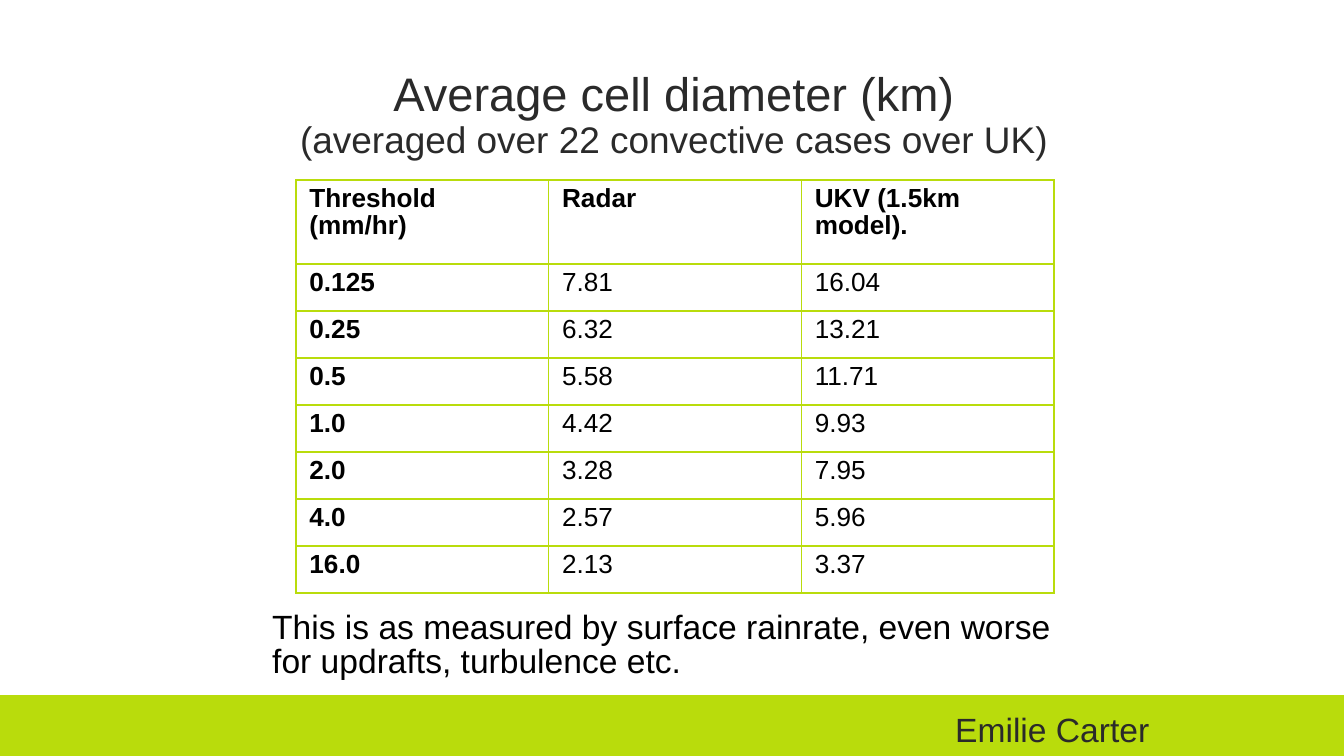
from lxml.etree import SubElement as Sub
from pptx import Presentation
from pptx.dml.color import RGBColor
from pptx.enum.shapes import MSO_SHAPE as Shape
from pptx.enum.text import MSO_ANCHOR as Anchor, MSO_AUTO_SIZE as Fit, PP_ALIGN as Align
from pptx.oxml.ns import qn
from pptx.util import Emu, Pt

SCALE = 914400 / 134.4
LIME, INK, BLACK, WHITE = "B9DC0C", "2A2A2A", "000000", "FFFFFF"
ROWS = [
    ("Threshold (mm/hr)", "Radar", "UKV (1.5km model)."),
    ("0.125", "7.81", "16.04"),
    ("0.25", "6.32", "13.21"),
    ("0.5", "5.58", "11.71"),
    ("1.0", "4.42", "9.93"),
    ("2.0", "3.28", "7.95"),
    ("4.0", "2.57", "5.96"),
    ("16.0", "2.13", "3.37"),
]


def px(n):
    return Emu(round(n * SCALE))


def area(*box):
    return [px(n) for n in box]


def tint(code):
    return RGBColor.from_string(code)


def write(para, text, size=18, color=BLACK, bold=False, align=Align.LEFT, lead=1.0):
    para.alignment = align
    para.line_spacing = lead
    run = para.add_run()
    run.text = text
    font = run.font
    font.name, font.size, font.bold = "Arial", Pt(size), bold
    font.color.rgb = tint(color)


def edge(cell):
    props = cell._tc.get_or_add_tcPr()
    for i, side in enumerate(("lnL", "lnR", "lnT", "lnB")):
        line = props.makeelement(qn("a:" + side), {"w": str(Pt(1))})
        fill = Sub(line, qn("a:solidFill"))
        Sub(fill, qn("a:srgbClr"), val=LIME)
        props.insert(i, line)


def head(slide, x, y, w, h):
    title = slide.shapes.title
    title.left, title.top, title.width, title.height = area(x, y, w, h)
    frame = title.text_frame
    frame.auto_size = Fit.NONE
    frame.vertical_anchor = Anchor.BOTTOM
    para = frame.paragraphs[0]
    style = dict(color=INK, align=Align.CENTER, lead=0.9)
    write(para, "Average cell diameter (km)", size=25.2, **style)
    para.add_line_break()
    Sub(para._p.find(qn("a:br")), qn("a:rPr"), sz="2520")
    write(para, "(averaged over 22 convective cases over UK)", size=19.8, **style)


def grid(slide, x, y, w, h, top=84):
    table = slide.shapes.add_table(len(ROWS), len(ROWS[0]), *area(x, y, w, h)).table
    table.first_row = table.horz_banding = False
    for col in table.columns:
        col.width = px(w / len(ROWS[0]))
    for r, row in enumerate(ROWS):
        table.rows[r].height = px((h - top) / (len(ROWS) - 1) if r else top)
        for c, text in enumerate(row):
            cell = table.cell(r, c)
            cell.fill.solid()
            cell.fill.fore_color.rgb = tint(WHITE)
            edge(cell)
            write(cell.text_frame.paragraphs[0], text, size=14,
                  bold=r == 0 or c == 0, lead=0.9)


def note(slide, x, y, w, h, text, wrap=True, **style):
    frame = slide.shapes.add_textbox(*area(x, y, w, h)).text_frame
    frame.word_wrap = wrap
    frame.auto_size = Fit.SHAPE_TO_FIT_TEXT
    write(frame.paragraphs[0], text, **style)


def foot(slide, x, y, w, h):
    bar = slide.shapes.add_shape(Shape.RECTANGLE, *area(x, y, w, h))
    bar.shadow.inherit = False
    bar.fill.solid()
    bar.fill.fore_color.rgb = bar.line.color.rgb = tint(LIME)
    bar.line.width = Pt(1)
    note(slide, x + 942, y + 6, 223, 54, "Emilie Carter", wrap=False, color=INK)


def main():
    deck = Presentation()
    deck.slide_width, deck.slide_height = area(1344, 756)
    slide = deck.slides.add_slide(deck.slide_layouts[5])
    head(slide, 243, 83, 862, 85)
    grid(slide, 296, 180, 758, 413)
    note(slide, 259, 605, 831, 83,
         "This is as measured by surface rainrate, even worse for updrafts, turbulence etc.",
         lead=0.85)
    foot(slide, 0, 696, 1344, 60)
    deck.save("out.pptx")


if __name__ == "__main__":
    main()
